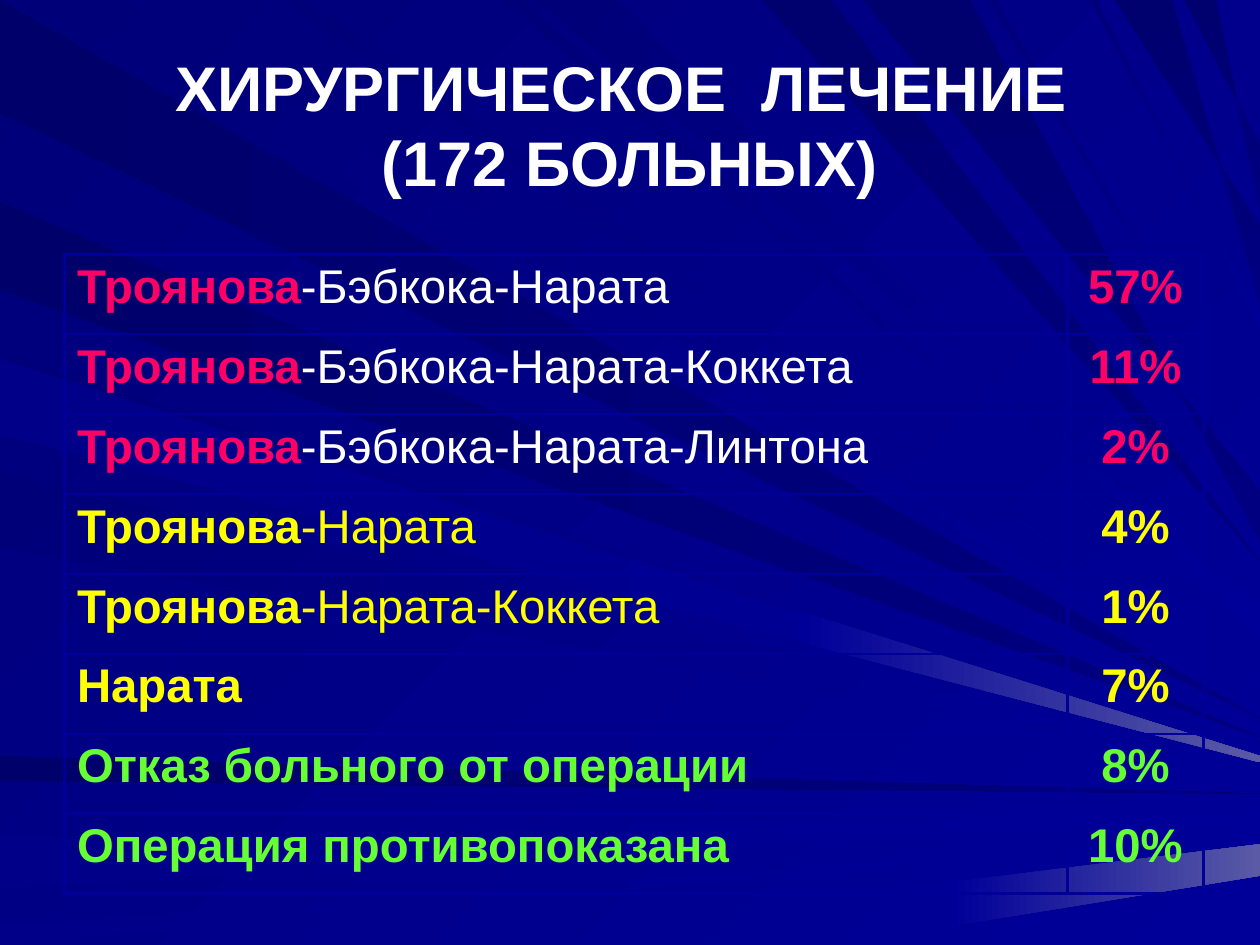
from dataclasses import dataclass

import pptx
import pptx.dml.color
import pptx.enum.text
import pptx.oxml
import pptx.oxml.ns
import pptx.util

Cm = pptx.util.Cm
Pt = pptx.util.Pt
ALIGN = pptx.enum.text.PP_ALIGN
ANCHOR = pptx.enum.text.MSO_ANCHOR


@dataclass(frozen=True)
class Theme:
    font: str = "Arial"
    title_size: float = 36
    table_size: float = 27
    white: str = "FFFFFF"
    pink: str = "FF0066"
    yellow: str = "FFFF00"
    green: str = "66FF33"
    border: str = "000099"
    outer_border: float = 2.25
    inner_border: float = 1.5
    # Gradients: start colour, end colour, clockwise angle
    backdrop: tuple = ("000078", "000099", 45)
    deep: tuple = ("00006B", "000080", 0)
    steep: tuple = ("00006F", "000080", 90)
    soft: tuple = ("000078", "000099", 45)
    faint: tuple = ("000088", "000099", 0)
    glow: tuple = ("000099", "5A5AA6", 0)


THEME = Theme()

# Operation: bold part, its colour, regular part, its colour, share of patients
OPERATIONS = [
    ("Троянова", THEME.pink, "-Бэбкока-Нарата", THEME.white, "57%"),
    ("Троянова", THEME.pink, "-Бэбкока-Нарата-Коккета", THEME.white, "11%"),
    ("Троянова", THEME.pink, "-Бэбкока-Нарата-Линтона", THEME.white, "2%"),
    ("Троянова", THEME.yellow, "-Нарата", THEME.yellow, "4%"),
    ("Троянова", THEME.yellow, "-Нарата-Коккета", THEME.yellow, "1%"),
    ("Нарата", THEME.yellow, "", THEME.yellow, "7%"),
    ("Отказ больного от операции", THEME.green, "", THEME.green, "8%"),
    ("Операция противопоказана", THEME.green, "", THEME.green, "10%"),
]

# Rays run to the right edge, measured in hundredths of the slide width:
# shade, start span along the edge, then the end height or end span
RAY_STEPS = 100
LEFT_RAYS = [
    (THEME.deep, (0, 9), (57,)),
    (THEME.deep, (60, 62), (63,)),
    (THEME.faint, (66.5, 70.5), (64.3, 65)),
    (THEME.faint, (73.5, 75), (66.2,)),
    (THEME.deep, (16, 23), (58.5,)),
    (THEME.soft, (28, 34), (60,)),
    (THEME.soft, (37.5, 43.5), (60.5,)),
    (THEME.faint, (28.5, 34.5), (60.3,)),
]
TOP_RAYS = [
    (THEME.soft, (2.5, 10), (56,)),
    (THEME.soft, (40, 41.5), (52,)),
    (THEME.soft, (42.5, 49), (48, 51)),
    (THEME.steep, (60.5, 66), (44.5,)),
    (THEME.steep, (88.5, 93), (18, 24)),
    (THEME.steep, (94, 96.5), (11.5, 16.5)),
    (THEME.soft, (22.5, 24.5), (55,)),
    (THEME.steep, (68.5, 77), (39, 43)),
    (THEME.soft, (78.5, 79), (36,)),
    (THEME.soft, (86.5, 87), (25, 26)),
]
# Bright ray ends: left position, start span, end span
GLOWS = [(63.5, (48.5, 51), (60, 60.5)), (75.5, (70, 73.5), (67, 69.5))]


def rgb(value):
    return pptx.dml.color.RGBColor.from_string(value)


def paint(fill, shade):
    *colours, clockwise = shade
    fill.gradient()
    fill.gradient_angle = (360 - clockwise) % 360
    for stop, colour in zip(fill.gradient_stops, colours):
        stop.color.rgb = rgb(colour)


def write_text(frame, pieces, *, size, align=ALIGN.LEFT, anchor=ANCHOR.TOP):
    """Write (text, colour, bold) pieces as one paragraph; a newline breaks the line."""
    frame.word_wrap = True
    frame.vertical_anchor = anchor
    paragraph = frame.paragraphs[0]
    paragraph.alignment = align
    for text, colour, bold in pieces:
        for number, line in enumerate(text.split("\n")):
            if number:
                paragraph.add_line_break()
            run = paragraph.add_run()
            run.text = line
            run.font.name = THEME.font
            run.font.size = Pt(size)
            run.font.bold = bold
            run.font.color.rgb = rgb(colour)


def add_ray(slide, shade, starts, end_span):
    """Draw a ray from two start points to the given heights on the right edge."""
    ends = [(RAY_STEPS, end_span[-1]), (RAY_STEPS, end_span[0])]
    corners = [(Cm(0.254 * x), Cm(0.254 * y)) for x, y in starts + ends]
    builder = slide.shapes.build_freeform(*corners[0])
    builder.add_line_segments(corners[1:], close=True)
    ray = builder.convert_to_shape()
    ray.shadow.inherit = False
    ray.line.fill.background()
    paint(ray.fill, shade)


def add_rays(slide):
    for shade, span, end_span in LEFT_RAYS:
        add_ray(slide, shade, [(0, y) for y in span], end_span)
    for shade, span, end_span in TOP_RAYS:
        add_ray(slide, shade, [(x, 0) for x in reversed(span)], end_span[::-1])
    for left, span, end_span in GLOWS:
        add_ray(slide, THEME.glow, [(left, y) for y in span], end_span)


def add_title(slide, text):
    title = slide.shapes.add_textbox(Cm(0), Cm(0.91), Cm(25.4), Cm(3.18))
    write_text(title.text_frame, [(text, THEME.white, True)], size=THEME.title_size,
               align=ALIGN.CENTER, anchor=ANCHOR.MIDDLE)


def set_borders(cell, outer_sides):
    properties = cell._tc.get_or_add_tcPr()
    for position, side in enumerate("LRTB"):
        width = THEME.outer_border if side in outer_sides else THEME.inner_border
        properties.insert(position, pptx.oxml.parse_xml(
            f'<a:ln{side} {pptx.oxml.ns.nsdecls("a")} w="{Pt(width)}"><a:solidFill>'
            f'<a:srgbClr val="{THEME.border}"/></a:solidFill></a:ln{side}>'))


def add_operations_table(slide):
    widths = [Cm(20.22), Cm(2.74)]
    row_height = Cm(1.61)
    count = len(OPERATIONS)
    table = slide.shapes.add_table(count, len(widths), Cm(1.3), Cm(5.13),
                                   sum(widths), row_height * count).table
    table.first_row = table.horz_banding = False
    for column, width in zip(table.columns, widths):
        column.width = width
    for index, (lead, lead_colour, rest, rest_colour, share) in enumerate(OPERATIONS):
        table.rows[index].height = row_height
        name_pieces = [(lead, lead_colour, True)]
        if rest:
            name_pieces.append((rest, rest_colour, False))
        edges = ("T" if index == 0 else "") + ("B" if index == count - 1 else "")
        for column, (pieces, align, side) in enumerate([
                (name_pieces, ALIGN.LEFT, "L"),
                ([(share, lead_colour, True)], ALIGN.CENTER, "R")]):
            cell = table.cell(index, column)
            cell.fill.background()
            set_borders(cell, edges + side)
            write_text(cell.text_frame, pieces, size=THEME.table_size, align=align)


def main():
    deck = pptx.Presentation()
    deck.slide_width, deck.slide_height = Cm(25.4), Cm(19.05)
    slide = deck.slides.add_slide(deck.slide_layouts[6])
    paint(slide.background.fill, THEME.backdrop)
    add_rays(slide)
    add_title(slide, "ХИРУРГИЧЕСКОЕ  ЛЕЧЕНИЕ \n(172 БОЛЬНЫХ)")
    add_operations_table(slide)
    deck.save("out.pptx")


if __name__ == "__main__":
    main()
